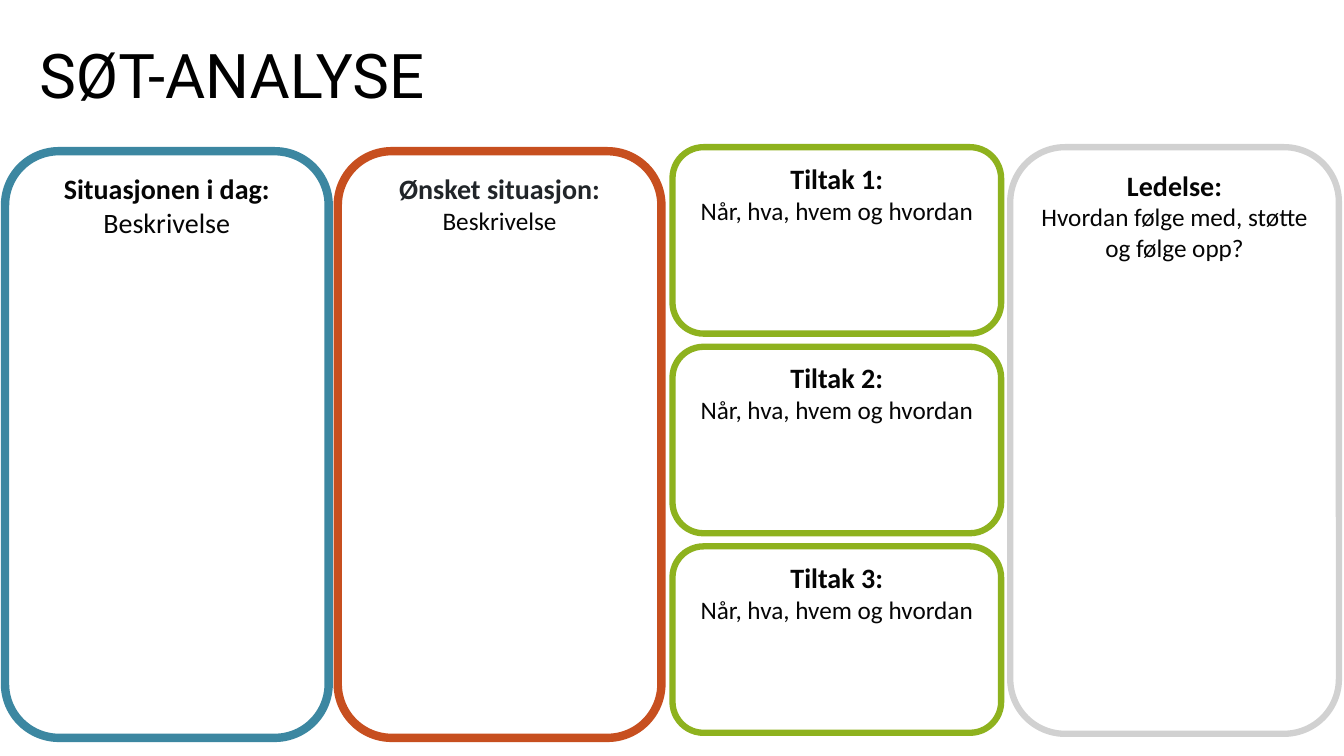
from dataclasses import dataclass

from pptx import Presentation
from pptx.dml.color import RGBColor
from pptx.enum.shapes import MSO_SHAPE
from pptx.enum.text import MSO_ANCHOR, MSO_AUTO_SIZE, PP_ALIGN
from pptx.slide import Slide
from pptx.text.text import TextFrame, _Paragraph
from pptx.util import Inches, Pt

COLOURS = {
    "white": "FFFFFF",
    "black": "000000",
    "text": "050505",
    "slate": "212529",
    "blue": "3C87A1",
    "orange": "C74F1F",
    "green": "8EB21E",
    "grey": "D1D1D1",
}
COLUMN_HEIGHT = 5.82
ACTION_HEIGHT = 1.85
ACTION_STEP = 1.98


@dataclass(frozen=True)
class Panel:
    heading: str
    body: str
    left: float
    top: float
    width: float
    height: float
    outline: str
    weight: float
    heading_colour: str = "text"
    body_size: int = 18


def colour(name: str) -> RGBColor:
    return RGBColor.from_string(COLOURS[name])


def set_attributes(target: object, values: dict) -> None:
    for name, value in values.items():
        setattr(target, name, value)


def write_text(para: _Paragraph, text: str, size: int, shade: str,
               font: str = "Calibri", bold: bool = False) -> None:
    span = para.add_run()
    span.text = text
    set_attributes(span.font, {"name": font, "size": Pt(size), "bold": bold})
    span.font.color.rgb = colour(shade)


def draw_title(page: Slide, text: str) -> None:
    title = page.shapes.title
    set_attributes(title, {
        "left": Inches(0.29), "top": Inches(0.05),
        "width": Inches(11.5), "height": Inches(1.45),
    })
    frame: TextFrame = title.text_frame
    set_attributes(frame, {
        "word_wrap": True,
        "auto_size": MSO_AUTO_SIZE.NONE,
        "vertical_anchor": MSO_ANCHOR.MIDDLE,
    })
    para = frame.paragraphs[0]
    set_attributes(para, {"alignment": PP_ALIGN.LEFT, "line_spacing": 0.9})
    write_text(para, text, 44, "black", "Roboto")


def draw_panel(page: Slide, panel: Panel) -> None:
    box = page.shapes.add_shape(
        MSO_SHAPE.ROUNDED_RECTANGLE,
        Inches(panel.left), Inches(panel.top),
        Inches(panel.width), Inches(panel.height),
    )
    box.shadow.inherit = False
    box.fill.solid()
    box.fill.fore_color.rgb = colour("white")
    box.line.color.rgb = colour(panel.outline)
    box.line.width = Pt(panel.weight)
    frame = box.text_frame
    set_attributes(frame, {"word_wrap": True, "vertical_anchor": MSO_ANCHOR.TOP})
    heading, body = frame.paragraphs[0], frame.add_paragraph()
    for para in (heading, body):
        para.alignment = PP_ALIGN.CENTER
    write_text(heading, panel.heading, 20, panel.heading_colour, bold=True)
    write_text(body, panel.body, panel.body_size, "text")


def main() -> None:
    deck = Presentation()
    set_attributes(deck, {"slide_width": Inches(13.33), "slide_height": Inches(7.5)})
    page = deck.slides.add_slide(deck.slide_layouts.get_by_name("Title Only"))
    draw_title(page, "SØT-ANALYSE")

    panels = [
        Panel("Situasjonen i dag:", "Beskrivelse", 0.05, 1.5, 3.21, COLUMN_HEIGHT,
              "blue", 6, body_size=20),
        Panel("Ønsket situasjon:", "Beskrivelse", 3.35, 1.5, 3.21, COLUMN_HEIGHT,
              "orange", 6, heading_colour="slate"),
        *(Panel(f"Tiltak {index + 1}:", "Når, hva, hvem og hvordan", 6.67,
                1.46 + index * ACTION_STEP, 3.26, ACTION_HEIGHT, "green", 4.5)
          for index in range(3)),
        Panel("Ledelse:", "Hvordan følge med, støtte og følge opp?", 10.02, 1.46, 3.26,
              COLUMN_HEIGHT, "grey", 4.5),
    ]
    for panel in panels:
        draw_panel(page, panel)
    deck.save("out.pptx")


if __name__ == "__main__":
    main()
